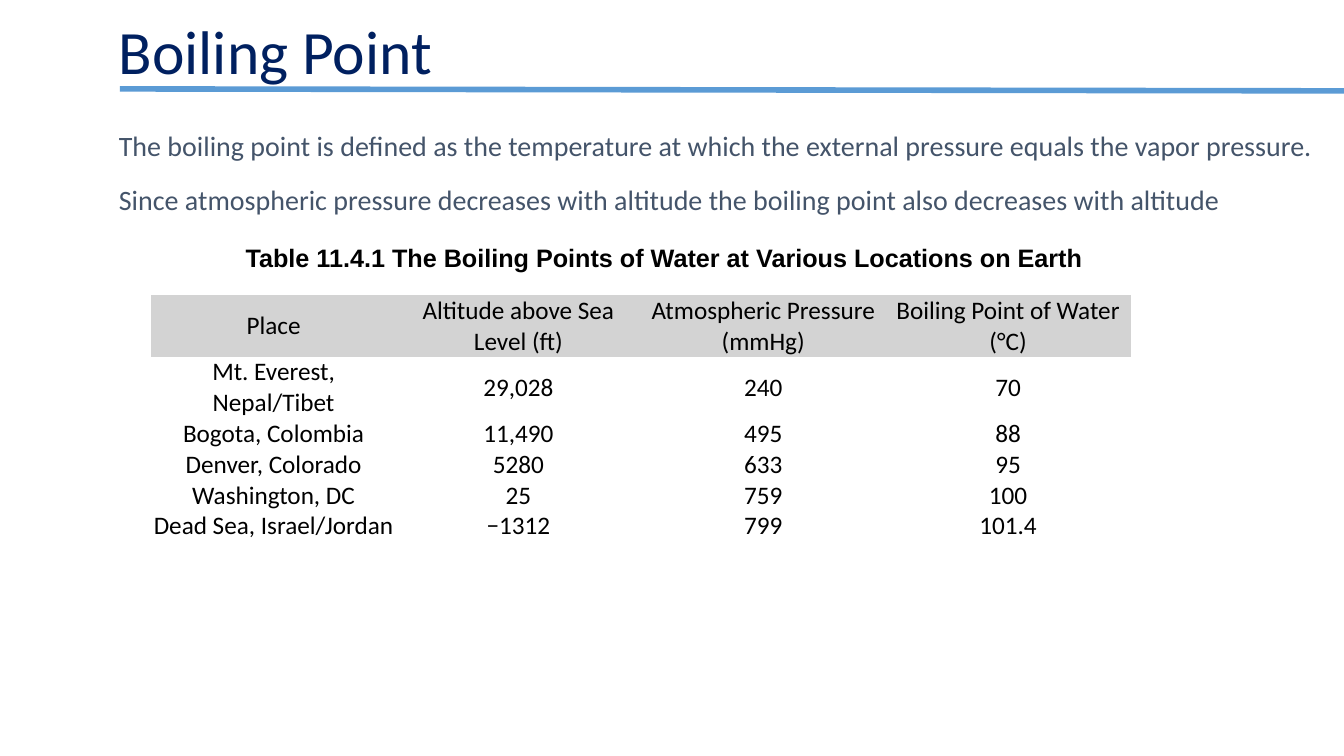
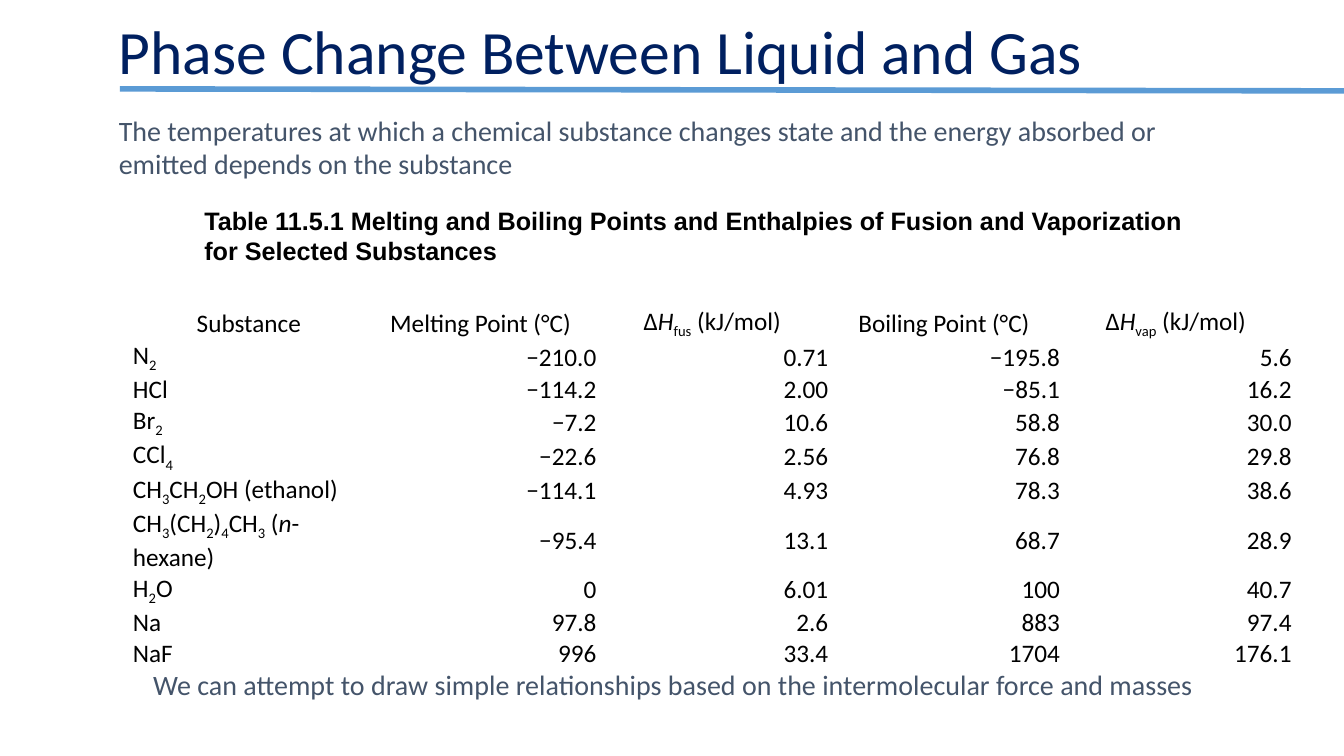
from lxml.etree import SubElement
from pptx import Presentation
from pptx.dml.color import RGBColor
from pptx.enum.shapes import MSO_CONNECTOR
from pptx.enum.text import MSO_ANCHOR, MSO_AUTO_SIZE, PP_ALIGN
from pptx.oxml.ns import qn
from pptx.util import Cm, Pt

NAVY = RGBColor(0x00, 0x20, 0x60)
SLATE = RGBColor(0x44, 0x54, 0x6A)
BLUE = RGBColor(0x5B, 0x9B, 0xD5)
GREY = RGBColor(0xD3, 0xD3, 0xD3)
BLACK = RGBColor(0x00, 0x00, 0x00)

NO_GRID = "{2D5ABB26-0587-4C30-8999-92F81FD0307C}"
LINE = Cm(0.77)
LEFT, CENTER, RIGHT = PP_ALIGN.LEFT, PP_ALIGN.CENTER, PP_ALIGN.RIGHT


def write(frame, text, size=20, color=SLATE, face="Calibri", bold=None,
          align=LEFT, gap=0, lead=None, plain=False):
    """Fill a frame, one paragraph per line; _x_ is subscript, *x* is italic."""
    for i, line in enumerate(text.split("\n")):
        para = frame.add_paragraph() if i else frame.paragraphs[0]
        if plain:
            props = para._p.get_or_add_pPr()
            props.set("marL", "0")
            props.set("indent", "0")
            SubElement(props, qn("a:buNone"))
        para.alignment = align
        para.space_before = Pt(gap if i else 0)
        para.line_spacing = lead
        for j, piece in enumerate(line.split("_")):
            for k, part in enumerate(piece.split("*")):
                if not part:
                    continue
                run = para.add_run()
                run.text = part
                font = run.font
                font.name, font.size, font.bold = face, Pt(size), bold
                font.color.rgb = color
                if k % 2:
                    font.italic = True
                if j % 2:
                    run._r.get_or_add_rPr().set("baseline", "-25000")


def put(shape, box):
    shape.left, shape.top, shape.width, shape.height = [Cm(n) for n in box]


PAGES = [
    {
        "title": "Boiling Point",
        "body": "The boiling point is defined as the temperature at which the "
                "external pressure equals the vapor pressure.\n"
                "Since atmospheric pressure decreases with altitude the boiling "
                "point also decreases with altitude",
        "place": (2.74, 3.12, 30.71, 2.49),
        "label": "Table 11.4.1 The Boiling Points of Water at Various Locations "
                 "on Earth",
        "spot": (5.94, 5.99, 21.67, 1.02),
        "grid": (3.81, 7.44, 6.17),
        "fill": GREY,
        "align": (CENTER, CENTER),
        "tall": (0, 1),
        "rows": [
            ("Place", "Altitude above Sea Level (ft)",
             "Atmospheric Pressure (mmHg)", "Boiling Point of Water (°C)"),
            ("Mt. Everest, Nepal/Tibet", "29,028", "240", "70"),
            ("Bogota, Colombia", "11,490", "495", "88"),
            ("Denver, Colorado", "5280", "633", "95"),
            ("Washington, DC", "25", "759", "100"),
            ("Dead Sea, Israel/Jordan", "−1312", "799", "101.4"),
        ],
    },
    {
        "title": "Phase Change Between Liquid and Gas",
        "body": "The temperatures at which a chemical substance changes state "
                "and the energy absorbed or emitted depends on the substance",
        "place": (2.74, 2.72, 26.8, 1.96),
        "label": "Table 11.5.1 Melting and Boiling Points and Enthalpies of "
                 "Fusion and Vaporization for Selected Substances",
        "spot": (4.9, 5.03, 26.11, 1.8),
        "grid": (3.35, 7.72, 5.84),
        "fill": None,
        "align": (LEFT, RIGHT),
        "tall": (6,),
        "rows": [
            ("Substance", "Melting Point (°C)", "Δ*H*_fus_ (kJ/mol)",
             "Boiling Point (°C)", "Δ*H*_vap_ (kJ/mol)"),
            ("N_2_", "−210.0", "0.71", "−195.8", "5.6"),
            ("HCl", "−114.2", "2.00", "−85.1", "16.2"),
            ("Br_2_", "−7.2", "10.6", "58.8", "30.0"),
            ("CCl_4_", "−22.6", "2.56", "76.8", "29.8"),
            ("CH_3_CH_2_OH (ethanol)", "−114.1", "4.93", "78.3", "38.6"),
            ("CH_3_(CH_2_)_4_CH_3_ (*n*-hexane)", "−95.4", "13.1", "68.7", "28.9"),
            ("H_2_O", "0", "6.01", "100", "40.7"),
            ("Na", "97.8", "2.6", "883", "97.4"),
            ("NaF", "996", "33.4", "1704", "176.1"),
        ],
    },
]

deck = Presentation()
deck.slide_width, deck.slide_height = Cm(33.87), Cm(19.05)
layout = deck.slide_layouts[1]
head = layout.placeholders[0]
put(head, (2.74, 0, 26.8, 2.34))
head.text_frame.vertical_anchor = MSO_ANCHOR.BOTTOM

for page in PAGES:
    slide = deck.slides.add_slide(layout)
    write(slide.shapes.title.text_frame, page["title"], size=44, color=NAVY,
          lead=0.9)

    body = slide.placeholders[1]
    put(body, page["place"])
    body.text_frame.auto_size = MSO_AUTO_SIZE.NONE
    write(body.text_frame, page["body"], gap=14.5, plain=True)

    rows = page["rows"]
    cols = len(rows[0])
    left, top, wide = [Cm(n) for n in page["grid"]]
    frame = slide.shapes.add_table(len(rows), cols, left, top, wide * cols,
                                   LINE * (len(rows) + len(page["tall"])))
    frame.element.xpath(".//a:tableStyleId")[0].text = NO_GRID
    table = frame.table
    table.first_row = table.horz_banding = False
    for r, row in enumerate(rows):
        table.rows[r].height = LINE * (2 if r in page["tall"] else 1)
        for c, text in enumerate(row):
            cell = table.cell(r, c)
            cell.margin_left = cell.margin_right = 0
            cell.margin_top = cell.margin_bottom = 0
            cell.vertical_anchor = MSO_ANCHOR.MIDDLE
            if r == 0 and page["fill"]:
                cell.fill.solid()
                cell.fill.fore_color.rgb = page["fill"]
            else:
                cell.fill.background()
            side = page["align"][min(c, 1)] if r else CENTER
            write(cell.text_frame, text, size=18, color=BLACK, align=side)

    label = slide.shapes.add_textbox(*[Cm(n) for n in page["spot"]])
    label.text_frame.word_wrap = True
    label.text_frame.vertical_anchor = MSO_ANCHOR.MIDDLE
    write(label.text_frame, page["label"], size=18, color=BLACK, face="Arial",
          bold=True)

# The closing remark belongs to the last slide only.
note = slide.shapes.add_textbox(Cm(3.61), Cm(16.69), Cm(26.8), Cm(1.11))
note.text_frame.word_wrap = True
write(note.text_frame, "We can attempt to draw simple relationships based on "
                       "the intermolecular force and masses")

# Both slides get the title rule from their layout.
rule = slide.shapes.add_connector(MSO_CONNECTOR.STRAIGHT, Cm(3.02), Cm(2.24),
                                  Cm(34.04), Cm(2.29))
rule.line.color.rgb = BLUE
rule.line.width = Pt(4)
SubElement(rule.element.spPr, qn("a:effectLst"))
layout.shapes.element.append(rule.element)

deck.save("out.pptx")
